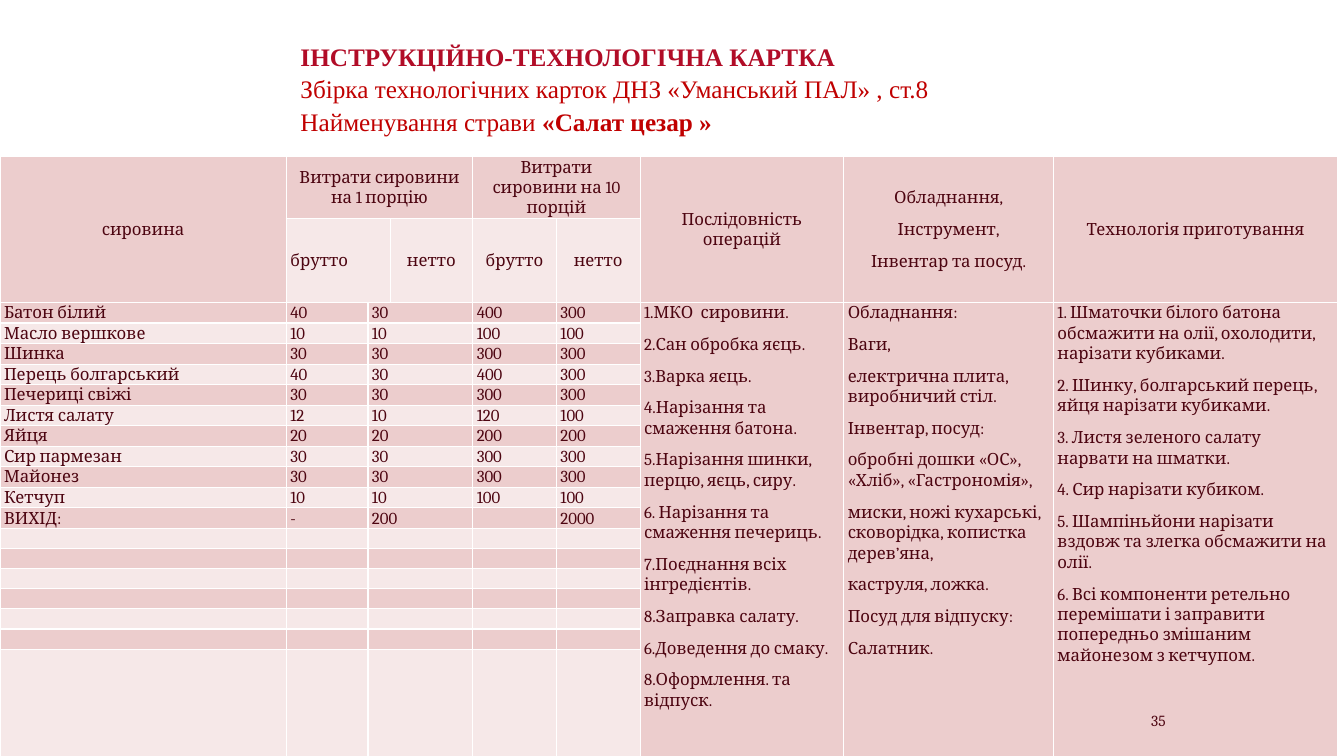
from lxml import etree
from pptx import Presentation
from pptx.dml.color import RGBColor
from pptx.enum.text import MSO_ANCHOR, MSO_AUTO_SIZE, PP_ALIGN
from pptx.oxml.ns import qn
from pptx.util import Inches, Pt

LEFT, CENTER, RIGHT = PP_ALIGN.LEFT, PP_ALIGN.CENTER, PP_ALIGN.RIGHT
TOP, MIDDLE, BOTTOM = MSO_ANCHOR.TOP, MSO_ANCHOR.MIDDLE, MSO_ANCHOR.BOTTOM
NO_AUTOFIT = MSO_AUTO_SIZE.NONE

TABLE_FONT, TITLE_FONT = "Cambria", "Times New Roman"
TEXT_COLOR, TITLE_COLOR, SUBTITLE_COLOR = "4D0511", "B10C27", "C00000"
DARK_BAND, LIGHT_BAND, BORDER_COLOR = "ECCDCD", "F6E8E8", "FFFFFF"

COLUMN_WIDTHS = [2.84, 0.81, 0.22, 0.82, 0.83, 0.83, 2.02, 2.08, 2.82]
INGREDIENT_ROWS = 18
ROW_HEIGHTS = [0.62, 0.82] + [0.2] * (INGREDIENT_ROWS - 1) + [1.58]
INGREDIENT_COLUMNS = [0, 1, 2, 4, 5]
LAST_ROW = len(ROW_HEIGHTS) - 1

HEADERS = {
    (0, 0): ["сировина"],
    (0, 1): ["Витрати сировини на 1 порцію"],
    (0, 4): ["Витрати сировини на 10 порцій"],
    (0, 6): ["Послідовність операцій"],
    (0, 7): ["Обладнання,", "Інструмент,", "Інвентар та посуд."],
    (0, 8): ["Технологія приготування"],
    (1, 1): ["брутто"],
    (1, 3): ["нетто"],
    (1, 4): ["брутто"],
    (1, 5): ["нетто"],
}
INGREDIENTS = [
    ("Батон білий", "40", "30", "400", "300"),
    ("Масло вершкове", "10", "10", "100", "100"),
    ("Шинка", "30", "30", "300", "300"),
    ("Перець болгарський", "40", "30", "400", "300"),
    ("Печериці свіжі", "30", "30", "300", "300"),
    ("Листя салату", "12", "10", "120", "100"),
    ("Яйця", "20", "20", "200", "200"),
    ("Сир пармезан", "30", "30", "300", "300"),
    ("Майонез", "30", "30", "300", "300"),
    ("Кетчуп", "10", "10", "100", "100"),
    ("ВИХІД:", "-", "200", "", "2000"),
]
OPERATIONS = [
    "1.МКО  сировини.",
    "2.Сан обробка яєць.",
    "3.Варка яєць.",
    "4.Нарізання та смаження батона.",
    "5.Нарізання шинки, перцю, яєць, сиру.",
    "6. Нарізання та смаження печериць.",
    "7.Поєднання всіх інгредієнтів.",
    "8.Заправка салату.",
    "6.Доведення до смаку.",
    "8.Оформлення. та відпуск.",
]
EQUIPMENT = [
    "Обладнання:",
    "Ваги,",
    "електрична плита, виробничий стіл.",
    "Інвентар, посуд:",
    "обробні дошки «ОС», «Хліб», «Гастрономія»,",
    "миски, ножі кухарські, сковорідка, копистка дерев’яна,",
    "каструля, ложка.",
    "Посуд для відпуску:",
    "Салатник.",
]
TECHNOLOGY = [
    "1. Шматочки білого батона обсмажити на олії, охолодити, нарізати кубиками.",
    "2. Шинку, болгарський перець, яйця нарізати кубиками.",
    "3. Листя зеленого салату нарвати на шматки.",
    "4. Сир нарізати кубиком.",
    "5. Шампіньйони нарізати вздовж та злегка обсмажити на олії.",
    "6. Всі компоненти ретельно перемішати і заправити попередньо змішаним майонезом з кетчупом.",
]


def rgb(color):
    """Turn a hex string into a colour."""
    return RGBColor.from_string(color)


def set_format(target, **values):
    """Set every given attribute on the target."""
    for name, value in values.items():
        setattr(target, name, value)


def add_run(paragraph, text, size, font, color, bold=False):
    """Add a formatted run to a paragraph."""
    run = paragraph.add_run()
    run.text = text
    set_format(run.font, size=Pt(size), name=font, bold=bold)
    run.font.color.rgb = rgb(color)


def add_title(slide):
    """Fill and format the title placeholder."""
    title = slide.shapes.title
    set_format(title, left=Inches(2.88), top=Inches(0.15), width=Inches(8.7), height=Inches(1.25))
    set_format(title.text_frame, word_wrap=True, auto_size=NO_AUTOFIT, vertical_anchor=BOTTOM)
    paragraph = title.text_frame.paragraphs[0]
    set_format(paragraph, alignment=LEFT, line_spacing=1.06, space_before=Pt(0), space_after=Pt(8))
    add_run(paragraph, "ІНСТРУКЦІЙНО-ТЕХНОЛОГІЧНА КАРТКА", 18, TITLE_FONT, TITLE_COLOR, True)
    paragraph.add_line_break()
    add_run(paragraph, "Збірка технологічних карток ДНЗ «Уманський ПАЛ» , ст.8", 18, TITLE_FONT, SUBTITLE_COLOR)
    paragraph.add_line_break()
    add_run(paragraph, "Найменування страви", 18, TITLE_FONT, SUBTITLE_COLOR)
    add_run(paragraph, " «Салат цезар »", 18, TITLE_FONT, SUBTITLE_COLOR, True)


def style_cell(cell, fill):
    """Give a cell its borders, fill, margins and empty-line text size."""
    properties = cell._tc.get_or_add_tcPr()
    for side in ("lnL", "lnR", "lnT", "lnB"):
        line = etree.SubElement(properties, qn(f"a:{side}"), w=str(Pt(1)))
        solid = etree.SubElement(line, qn("a:solidFill"))
        etree.SubElement(solid, qn("a:srgbClr"), val=BORDER_COLOR)
    cell.fill.solid()
    cell.fill.fore_color.rgb = rgb(fill)
    set_format(cell, margin_left=Inches(0.04), margin_right=Inches(0.04), margin_top=0, margin_bottom=0)
    paragraph = cell.text_frame.paragraphs[0]
    ending = etree.SubElement(paragraph._p, qn("a:endParaRPr"), sz="1200")
    etree.SubElement(ending, qn("a:latin"), typeface=TABLE_FONT)


def write_cell(cell, lines, alignment=LEFT, anchor=TOP):
    """Write one paragraph per line into a cell."""
    cell.vertical_anchor = anchor
    frame = cell.text_frame
    for index, line in enumerate(lines):
        paragraph = frame.add_paragraph() if index else frame.paragraphs[0]
        set_format(paragraph, alignment=alignment, line_spacing=1.06, space_after=Pt(8))
        add_run(paragraph, line, 12, TABLE_FONT, TEXT_COLOR)


def merge_cells(table):
    """Merge the header, net weight and description cells."""
    spans = [(0, 1, 0, 3), (0, 4, 0, 5), (1, 1, 1, 2)]
    spans += [(0, column, 1, column) for column in (0, 6, 7, 8)]
    spans += [(2, column, LAST_ROW, column) for column in (6, 7, 8)]
    spans += [(row, 2, row, 3) for row in range(2, LAST_ROW + 1)]
    for top, left, bottom, right in spans:
        table.cell(top, left).merge(table.cell(bottom, right))


def add_recipe_table(slide):
    """Add the recipe card table."""
    frame = slide.shapes.add_table(
        len(ROW_HEIGHTS), len(COLUMN_WIDTHS), Inches(0), Inches(1.55),
        Inches(sum(COLUMN_WIDTHS)), Inches(sum(ROW_HEIGHTS)))
    table = frame.table
    for column, width in zip(table.columns, COLUMN_WIDTHS):
        column.width = Inches(width)
    for index, (row, height) in enumerate(zip(table.rows, ROW_HEIGHTS)):
        row.height = Inches(height)
        for cell in row.cells:
            style_cell(cell, LIGHT_BAND if index % 2 else DARK_BAND)
    merge_cells(table)
    for (row, column), lines in HEADERS.items():
        alignment = LEFT if (row, column) == (1, 1) else CENTER
        write_cell(table.cell(row, column), lines, alignment, MIDDLE)
    for row, values in enumerate(INGREDIENTS, start=2):
        for column, value in zip(INGREDIENT_COLUMNS, values):
            if value:
                write_cell(table.cell(row, column), [value])
    for column, lines in enumerate((OPERATIONS, EQUIPMENT, TECHNOLOGY), start=6):
        write_cell(table.cell(2, column), lines)


def add_page_number(slide):
    """Add the page number."""
    box = slide.shapes.add_textbox(Inches(10.66), Inches(7), Inches(1), Inches(0.3))
    set_format(box.text_frame, word_wrap=True, vertical_anchor=MIDDLE)
    paragraph = box.text_frame.paragraphs[0]
    paragraph.alignment = RIGHT
    add_run(paragraph, "35", 11, TABLE_FONT, TEXT_COLOR)


def main():
    """Build and save the presentation."""
    presentation = Presentation()
    set_format(presentation, slide_width=Inches(13.33), slide_height=Inches(7.5))
    slide = presentation.slides.add_slide(presentation.slide_layouts[5])
    add_title(slide)
    add_recipe_table(slide)
    add_page_number(slide)
    presentation.save("out.pptx")


if __name__ == "__main__":
    main()
